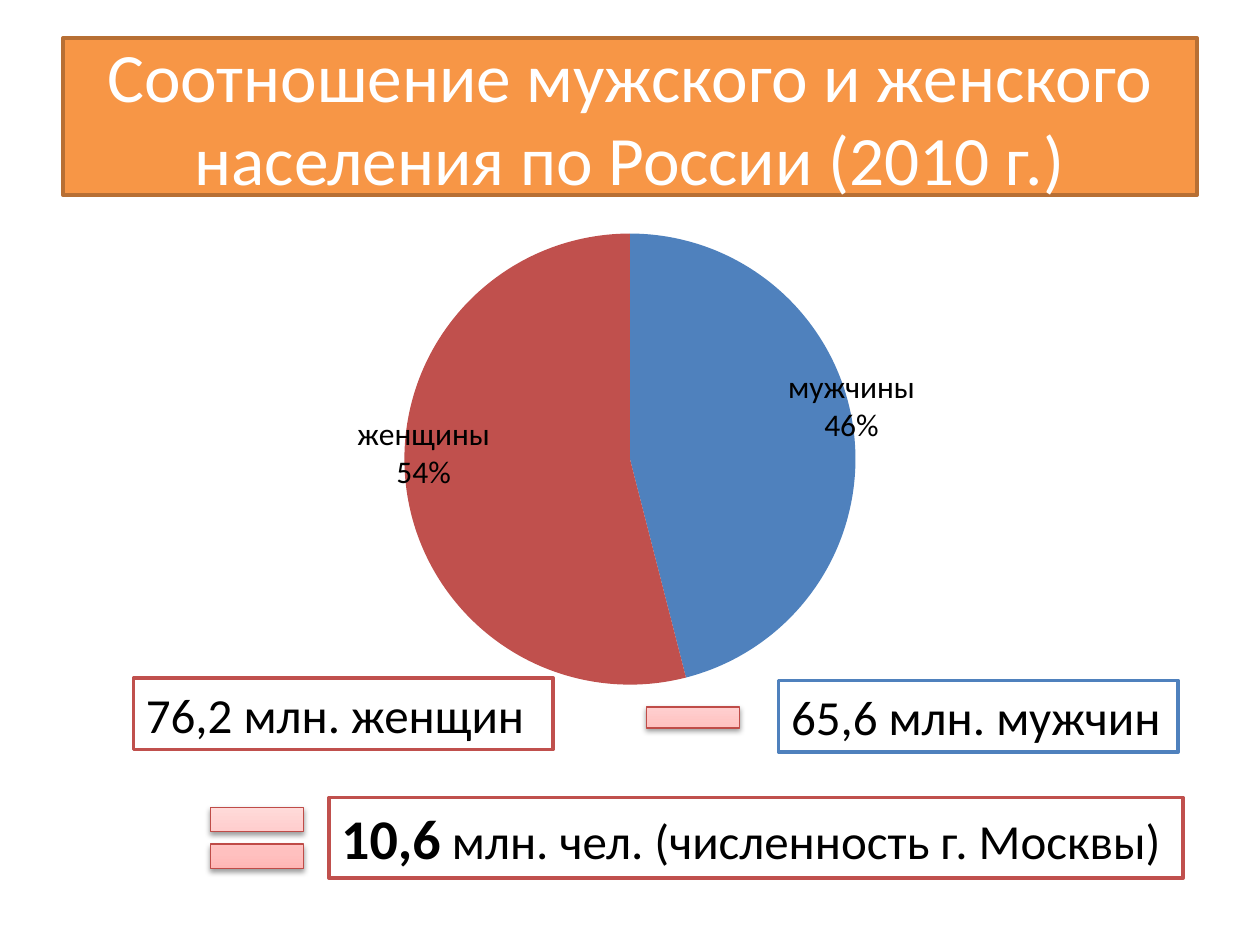
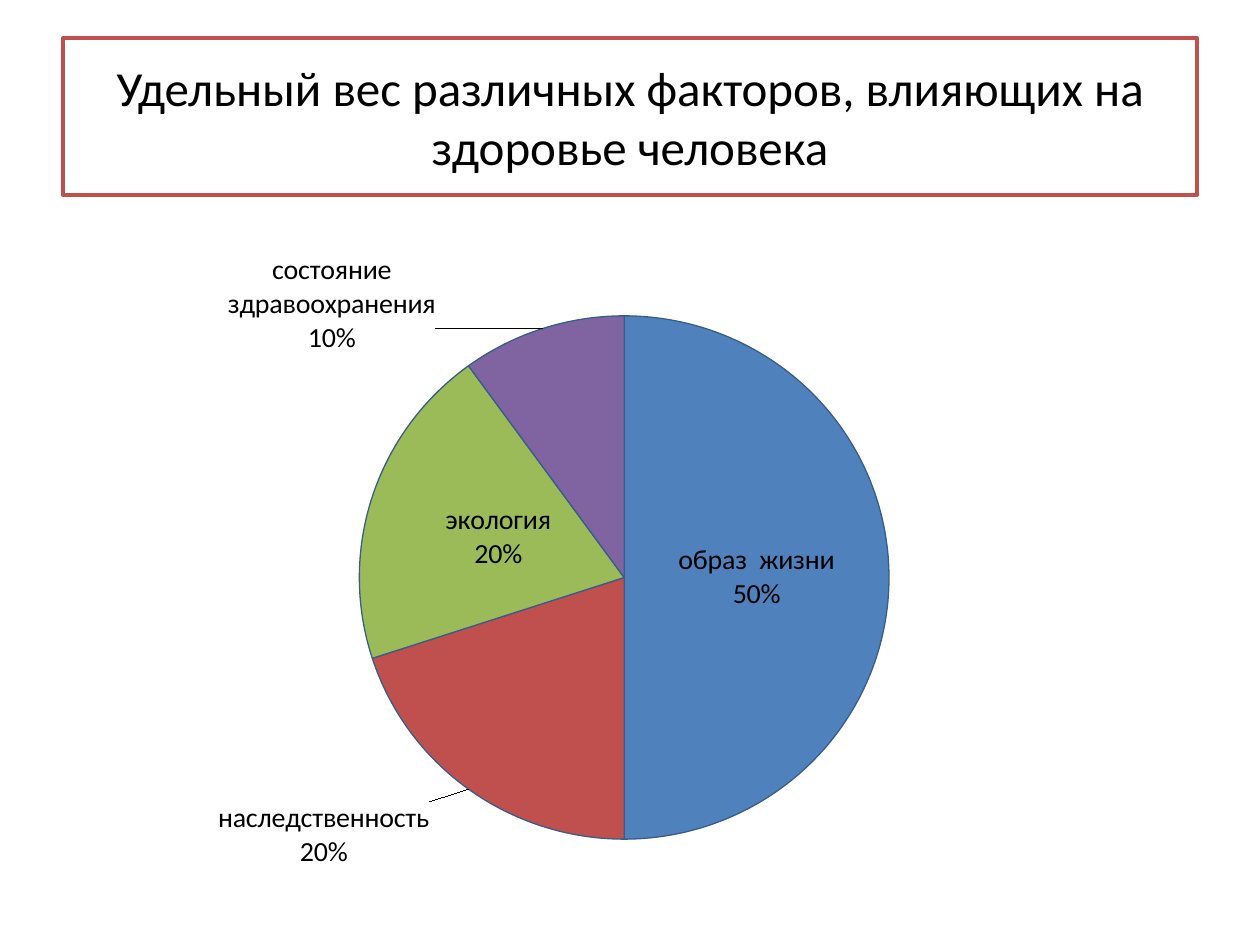
from dataclasses import dataclass

from lxml import etree
from pptx import Presentation
from pptx.chart.data import CategoryChartData
from pptx.dml.color import RGBColor
from pptx.enum.chart import XL_CHART_TYPE
from pptx.enum.shapes import MSO_SHAPE
from pptx.enum.text import MSO_ANCHOR, PP_ALIGN
from pptx.oxml import parse_xml
from pptx.oxml.ns import nsdecls, qn
from pptx.util import Inches, Pt

COLORS = {
    "white": "FFFFFF", "black": "000000",
    "orange": "F79646", "brown": "B76F34",
    "blue": "4F81BD", "red": "C0504D", "green": "9BBB59", "purple": "8064A2",
    "outline": "385D8A", "sign_line": "BF4C48",
    "sign_dark": "FFA6A5", "sign_mid": "FFC0BF", "sign_light": "FFE7E7",
}
FONT = "Calibri"
SLICE_COLORS = ("blue", "red", "green", "purple")


@dataclass
class Span:
    text: str
    size: float = 28
    bold: bool = False


@dataclass
class Frame:
    """A bordered rectangle with one line of text."""
    left: float
    top: float
    width: float
    height: float
    border: str
    spans: list[Span]
    fill: str = "white"
    ink: str = "black"
    centred: bool = False


@dataclass
class Sign:
    """An arithmetic sign between the frames."""
    kind: MSO_SHAPE
    left: float
    top: float
    height: float


@dataclass
class Slice:
    name: str
    value: int
    position: str
    shift: tuple[float, float] = (0, 0)
    caption: str = ""


@dataclass
class Pie:
    left: float
    top: float
    width: float
    height: float
    size: int
    plot: tuple[float, float, float, float]
    slices: list[Slice]
    outlined: bool = False


def rgb(name: str) -> RGBColor:
    return RGBColor.from_string(COLORS[name])


def add_frame(page, frame: Frame) -> None:
    box = page.shapes.add_shape(MSO_SHAPE.RECTANGLE, Inches(frame.left), Inches(frame.top),
                                Inches(frame.width), Inches(frame.height))
    box.shadow.inherit = False
    box.fill.solid()
    box.fill.fore_color.rgb = rgb(frame.fill)
    box.line.color.rgb = rgb(frame.border)
    box.line.width = Pt(2)
    text_frame = box.text_frame
    text_frame.word_wrap = frame.centred
    text_frame.vertical_anchor = MSO_ANCHOR.MIDDLE if frame.centred else MSO_ANCHOR.TOP
    para = text_frame.paragraphs[0]
    para.alignment = PP_ALIGN.CENTER if frame.centred else PP_ALIGN.LEFT
    for span in frame.spans:
        run = para.add_run()
        run.text = span.text
        run.font.name = FONT
        run.font.size = Pt(span.size)
        run.font.bold = span.bold
        run.font.color.rgb = rgb(frame.ink)


def add_title(page, text: str, size: float, fill: str, border: str, ink: str) -> None:
    add_frame(page, Frame(0.5, 0.3, 9, 1.25, border, [Span(text, size)], fill, ink, True))


def add_sign(page, sign: Sign) -> None:
    shape = page.shapes.add_shape(sign.kind, Inches(sign.left), Inches(sign.top),
                                  Inches(1), Inches(sign.height))
    shape.line.color.rgb = rgb("sign_line")
    shape.line.width = Pt(0.75)
    # Three-stop gradient and soft shadow
    stops = "".join(
        f'<a:gs pos="{place * 1000}"><a:srgbClr val="{COLORS[name]}"/></a:gs>'
        for place, name in ((0, "sign_dark"), (35, "sign_mid"), (100, "sign_light")))
    gradient = parse_xml(f'<a:gradFill {nsdecls("a")} rotWithShape="1"><a:gsLst>{stops}</a:gsLst>'
                         '<a:lin ang="16200000" scaled="1"/></a:gradFill>')
    shadow = parse_xml(
        f'<a:effectLst {nsdecls("a")}><a:outerShdw blurRad="{Pt(3.1)}" dist="{Pt(1.6)}" '
        f'dir="5400000" rotWithShape="0"><a:srgbClr val="{COLORS["black"]}">'
        '<a:alpha val="38000"/></a:srgbClr></a:outerShdw></a:effectLst>')
    outline = shape.line._get_or_add_ln()
    outline.addprevious(gradient)
    outline.addnext(shadow)


def manual_layout(values: dict[str, float], inner: bool = False) -> str:
    modes = ('<c:layoutTarget val="inner"/><c:xMode val="edge"/><c:yMode val="edge"/>'
             if inner else "")
    numbers = "".join(f'<c:{key} val="{value}"/>' for key, value in values.items())
    return f"<c:layout><c:manualLayout>{modes}{numbers}</c:manualLayout></c:layout>"


def caption_xml(caption: str, size: int) -> str:
    lines = "".join(
        f'<a:p><a:r><a:rPr lang="ru-RU" sz="{size * 100}"><a:solidFill>'
        f'<a:srgbClr val="{COLORS["black"]}"/></a:solidFill><a:latin typeface="{FONT}"/></a:rPr>'
        f"<a:t>{line}</a:t></a:r></a:p>" for line in caption.split("\n"))
    return f"<c:tx><c:rich><a:bodyPr/>{lines}</c:rich></c:tx>"


def labels_xml(pie: Pie) -> str:
    flags = "".join(
        f'<c:show{key} val="{int(key in ("CatName", "Percent"))}"/>'
        for key in ("LegendKey", "Val", "CatName", "SerName", "Percent", "BubbleSize"))
    flags += "<c:separator>\n</c:separator>"
    number_format = '<c:numFmt formatCode="0%" sourceLinked="0"/>'
    labels = ""
    for index, part in enumerate(pie.slices):
        layout = manual_layout(dict(zip("xy", part.shift))) if any(part.shift) else ""
        text = caption_xml(part.caption, pie.size) if part.caption else ""
        labels += (f'<c:dLbl><c:idx val="{index}"/>{layout}{text}{number_format}'
                   f'<c:dLblPos val="{part.position}"/>{flags}</c:dLbl>')
    return (f'<c:dLbls {nsdecls("c", "a")}>{labels}{number_format}{flags}'
            f'<c:showLeaderLines val="{int(pie.outlined)}"/></c:dLbls>')


def add_pie(page, pie: Pie) -> None:
    data = CategoryChartData()
    data.categories = [part.name for part in pie.slices]
    data.add_series("Series 1", [part.value for part in pie.slices])
    chart = page.shapes.add_chart(XL_CHART_TYPE.PIE, Inches(pie.left), Inches(pie.top),
                                  Inches(pie.width), Inches(pie.height), data).chart
    chart.has_legend = False
    chart.has_title = False
    chart.font.name = FONT
    chart.font.size = Pt(pie.size)
    chart.font.color.rgb = rgb("black")
    plot = chart.plots[0]
    plot.vary_by_categories = True
    series = plot.series[0]
    for index, _ in enumerate(pie.slices):
        look = series.points[index].format
        look.fill.solid()
        look.fill.fore_color.rgb = rgb(SLICE_COLORS[index])
        if pie.outlined:
            look.line.color.rgb = rgb("outline")
            look.line.width = Pt(0.75)
        else:
            look.line.fill.background()
    # Labels and the place of the plot
    series._element.find(qn("c:cat")).addprevious(parse_xml(labels_xml(pie)))
    area = chart._chartSpace.chart.plotArea
    for old in area.findall(qn("c:layout")):
        area.remove(old)
    layout = manual_layout(dict(zip("xywh", pie.plot)), inner=True)
    area.insert(0, etree.fromstring(layout.replace("<c:layout>", f'<c:layout {nsdecls("c")}>', 1)))


GENDER_PIE = Pie(1.38, 1.7, 7.24, 3.85, 18, (0.25, 0.04, 0.5, 0.93), [
    Slice("мужское население", 46, "outEnd", (-0.08, 0.03), "мужчины\n46%"),
    Slice("женское население", 54, "outEnd", (0.1, -0.15), "женщины\n54%"),
])
FACTOR_PIE = Pie(0.35, 1.75, 9.21, 5.39, 16, (0.08, 0.13, 0.84, 0.78), [
    Slice("образ  жизни", 50, "ctr"),
    Slice("наследственность", 20, "outEnd", (-0.03, 0.01)),
    Slice("экология", 20, "ctr"),
    Slice("состояние здравоохранения", 10, "outEnd", (-0.09, 0.05)),
], outlined=True)
FRAMES = [
    Frame(1.06, 5.38, 3.33, 0.57, "red", [Span("76,2 млн. женщин")]),
    Frame(6.18, 5.4, 3.17, 0.57, "blue", [Span("65,6 млн. мужчин")]),
    Frame(2.61, 6.33, 6.78, 0.64, "red",
          [Span("10,6", 32, True), Span(" млн. чел. (численность г. Москвы)")]),
]
SIGNS = [Sign(MSO_SHAPE.MATH_MINUS, 5, 5.34, 0.71), Sign(MSO_SHAPE.MATH_EQUAL, 1.54, 6.24, 0.82)]


def main() -> None:
    deck = Presentation()
    deck.slide_width, deck.slide_height = Inches(10), Inches(7.5)
    blank = deck.slide_layouts[6]

    # Men and women in the population
    page = deck.slides.add_slide(blank)
    add_title(page, "Соотношение мужского и женского населения по России (2010 г.)",
              39.6, "orange", "brown", "white")
    add_pie(page, GENDER_PIE)
    for frame in FRAMES:
        add_frame(page, frame)
    for sign in SIGNS:
        add_sign(page, sign)

    # Health factors
    page = deck.slides.add_slide(blank)
    add_title(page, "Удельный вес различных факторов, влияющих на здоровье человека",
              28, "white", "red", "black")
    add_pie(page, FACTOR_PIE)

    deck.save("out.pptx")


if __name__ == "__main__":
    main()
